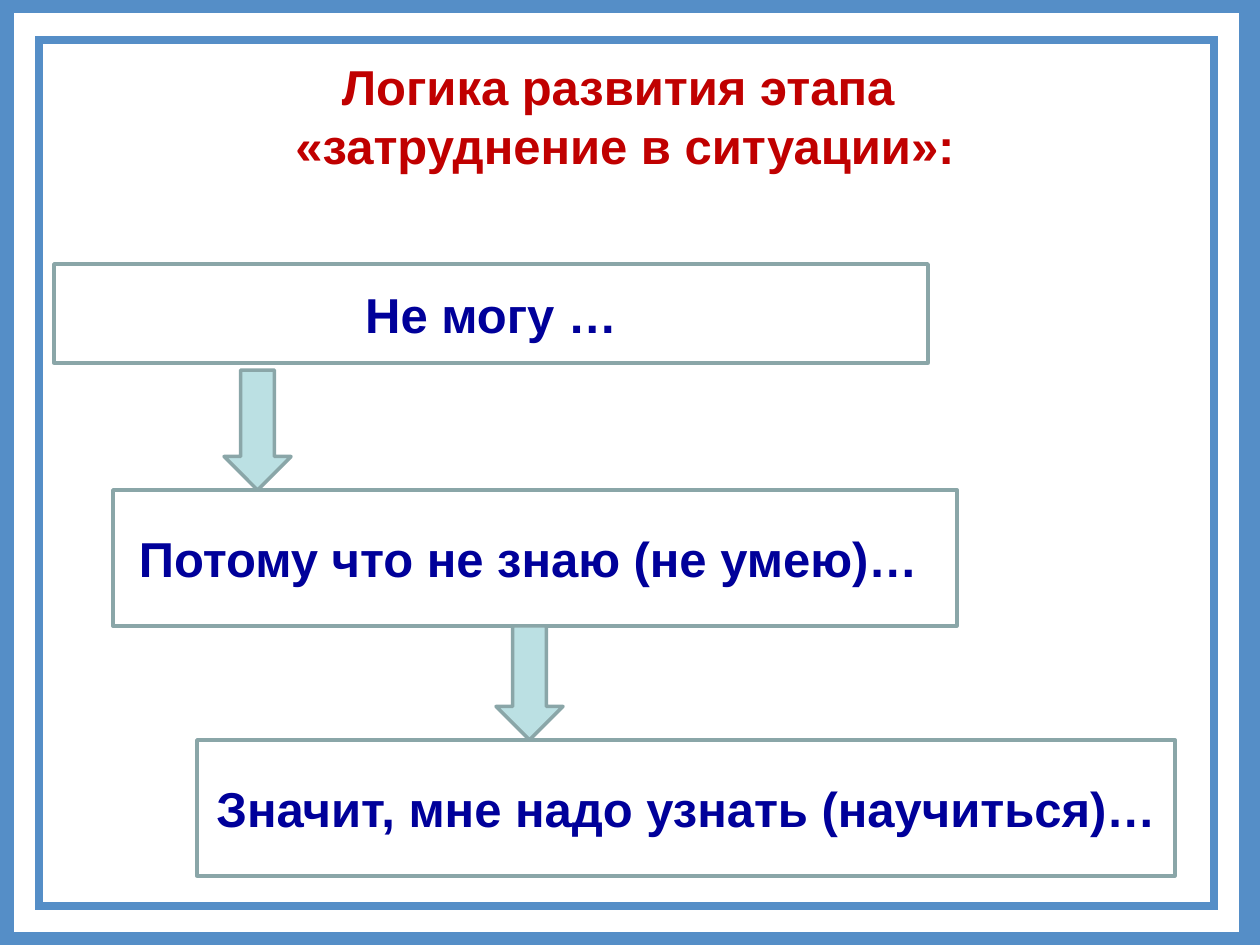
from lxml.etree import SubElement
from pptx import Presentation
from pptx.dml.color import RGBColor
from pptx.enum.shapes import MSO_SHAPE as Shape
from pptx.enum.text import MSO_ANCHOR as Anchor, PP_ALIGN as Align
from pptx.oxml.ns import qn
from pptx.util import Pt

EMU_PER_PX = 914400 / 126
COLORS = {
    "title": "C00000",
    "step_text": "00009A",
    "step_fill": "FFFFFF",
    "outline": "8AA6A8",
    "arrow": "BBE0E3",
    "frame": "558EC7",
}


def px(length):
    return round(length * EMU_PER_PX)


def color(name):
    return RGBColor.from_string(COLORS[name])


def write_text(frame, *lines, text_color, size=28, font="Arial", bold=True,
               align=Align.CENTER, anchor=Anchor.TOP):
    """Write each line as a paragraph of its own."""
    frame.word_wrap = True
    frame.vertical_anchor = anchor
    for index, line in enumerate(lines):
        paragraph = frame.paragraphs[0] if index == 0 else frame.add_paragraph()
        paragraph.alignment = align
        run = paragraph.add_run()
        run.text = line
        run.font.name = font
        run.font.size = Pt(size)
        run.font.bold = bold
        run.font.color.rgb = color(text_color)


def add_shape(slide, kind, box, line, width, fill=None):
    shape = slide.shapes.add_shape(kind, *map(px, box))
    shape.shadow.inherit = False
    if fill:
        shape.fill.solid()
        shape.fill.fore_color.rgb = color(fill)
    else:
        shape.fill.background()
    shape.line.color.rgb = color(line)
    shape.line.width = Pt(width)
    return shape


def add_title(slide, box):
    title = slide.shapes.add_textbox(*map(px, box))
    write_text(title.text_frame, "Логика развития этапа ",
               "«затруднение в ситуации»:", text_color="title")


def add_steps(slide, left, top):
    """Stairs of boxes; each arrow ends on the top of the box it leads to."""
    arrow_width = 67
    # text, x, y, width, height, arrow x, arrow height
    steps = [
        ("Не могу …", 0, 0, 874, 99, None, None),
        ("Потому что не знаю (не умею)… ", 59, 226, 844, 136, 170, 120),
        ("Значит, мне надо узнать (научиться)…", 143, 476, 978, 136, 442, 114),
    ]
    for text, x, y, width, height, arrow_x, arrow_height in steps:
        step = add_shape(slide, Shape.RECTANGLE, (left + x, top + y, width, height),
                         "outline", 2, fill="step_fill")
        write_text(step.text_frame, text, text_color="step_text",
                   anchor=Anchor.MIDDLE)
        if arrow_x is not None:
            arrow_box = (left + arrow_x, top + y - arrow_height,
                         arrow_width, arrow_height)
            add_shape(slide, Shape.DOWN_ARROW, arrow_box, "outline", 2, fill="arrow")


def add_frame(slide, box, width):
    """Unfilled border with sharp corners."""
    frame = add_shape(slide, Shape.RECTANGLE, box, "frame", width)
    outline = frame.element.spPr.find(qn("a:ln"))
    SubElement(outline, qn("a:miter"), lim="800000")


def main():
    presentation = Presentation()
    presentation.slide_width, presentation.slide_height = px(1260), px(945)
    slide = presentation.slides.add_slide(presentation.slide_layouts[6])
    add_title(slide, (54, 50, 1142, 131))
    add_steps(slide, 54, 264)
    add_frame(slide, (1, 0, 1251, 945), 15)
    add_frame(slide, (39, 40, 1175, 866), 4.5)
    presentation.save("out.pptx")


if __name__ == "__main__":
    main()
